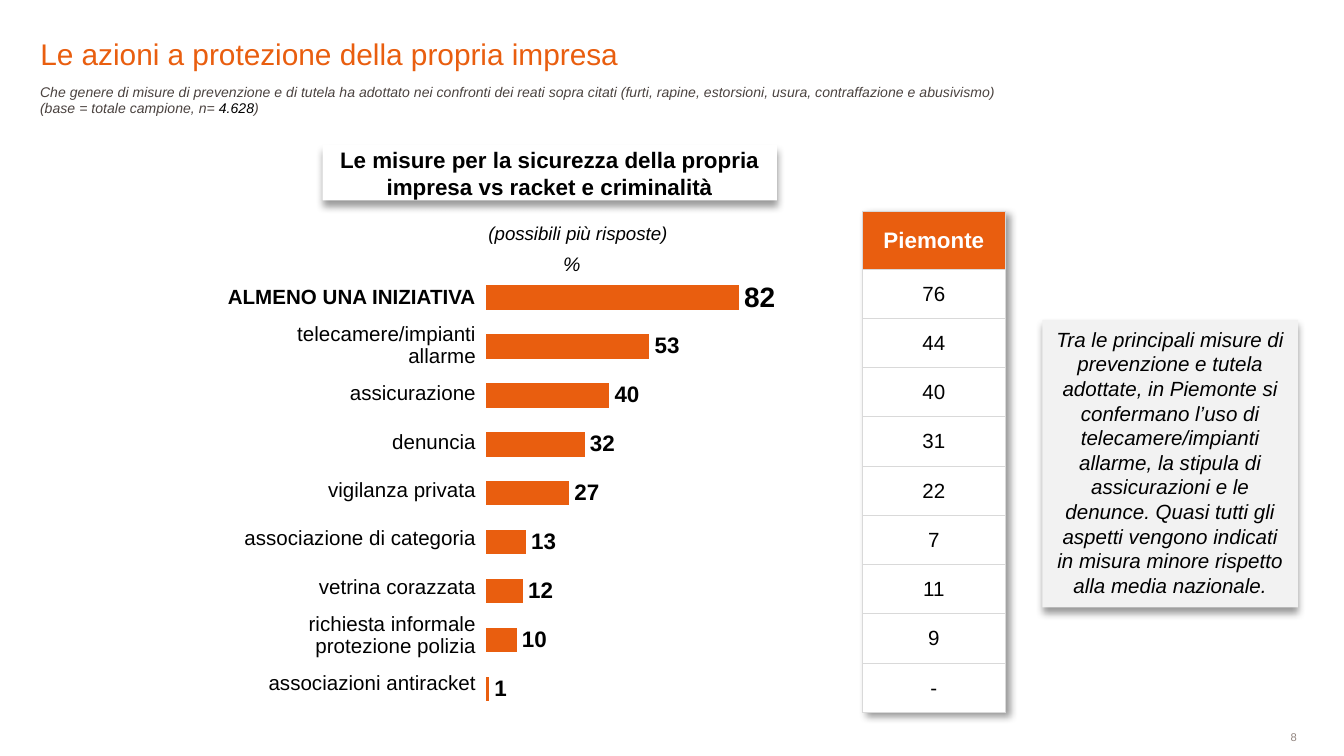
from lxml import etree
from pptx import Presentation
from pptx.chart.data import CategoryChartData
from pptx.dml.color import RGBColor
from pptx.enum.chart import XL_CHART_TYPE, XL_LABEL_POSITION
from pptx.enum.shapes import MSO_SHAPE
from pptx.enum.text import MSO_ANCHOR, PP_ALIGN
from pptx.oxml import parse_xml
from pptx.oxml.ns import nsdecls, qn
from pptx.util import Pt

ORANGE = RGBColor(0xE9, 0x5E, 0x0F)
BLACK = RGBColor(0, 0, 0)
WHITE = RGBColor(0xFF, 0xFF, 0xFF)
DARK = RGBColor(0x4A, 0x42, 0x3F)
GREY = RGBColor(0x92, 0x85, 0x80)
PALE = RGBColor(0xF2, 0xF2, 0xF2)
BORDER = RGBColor(0xD9, 0xD9, 0xD9)
FONT = "Arial"

# Label, national percentage, Piedmont percentage
MEASURES = [
    ("ALMENO UNA INIZIATIVA", 82, "76"),
    ("telecamere/impianti allarme", 53, "44"),
    ("assicurazione", 40, "40"),
    ("denuncia", 32, "31"),
    ("vigilanza privata", 27, "22"),
    ("associazione di categoria", 13, "7"),
    ("vetrina corazzata", 12, "11"),
    ("richiesta informale protezione polizia", 10, "9"),
    ("associazioni antiracket", 1, "-"),
]
COMMENT = (
    "Tra le principali misure di prevenzione e tutela adottate, in Piemonte si "
    "confermano l’uso di telecamere/impianti allarme, la stipula di assicurazioni "
    "e le denunce. Quasi tutti gli aspetti vengono indicati in misura minore "
    "rispetto alla media nazionale."
)


def points(box):
    return [Pt(length) for length in box]


def style_font(font, size, color=BLACK, bold=False, italic=False):
    values = {"name": FONT, "size": Pt(size), "bold": bold, "italic": italic}
    for name, value in values.items():
        setattr(font, name, value)
    font.color.rgb = color


def set_margins(target, left, top, right, bottom):
    margins = {"left": left, "top": top, "right": right, "bottom": bottom}
    for side, value in margins.items():
        setattr(target, f"margin_{side}", Pt(value))


def write(paragraph, runs, size, align=PP_ALIGN.LEFT, spacing=1.0, **style):
    """Write (text, colour) runs into one paragraph."""
    paragraph.alignment = align
    paragraph.line_spacing = spacing
    for text, color in runs:
        run = paragraph.add_run()
        run.text = text
        style_font(run.font, size, color, **style)


def add_text(slide, box, paragraphs, size, anchor=MSO_ANCHOR.TOP, inset=True, **style):
    frame = slide.shapes.add_textbox(*points(box)).text_frame
    frame.word_wrap = True
    frame.vertical_anchor = anchor
    if not inset:
        set_margins(frame, 0, 0, 0, 0)
    for index, runs in enumerate(paragraphs):
        paragraph = frame.add_paragraph() if index else frame.paragraphs[0]
        write(paragraph, runs, size, **style)


def shadow_xml(direction):
    return parse_xml(
        f'<a:effectLst {nsdecls("a")}><a:outerShdw blurRad="{Pt(4)}" dist="{Pt(3)}" '
        f'dir="{direction * 60000}" algn="t" rotWithShape="0"><a:srgbClr val="000000">'
        '<a:alpha val="40000"/></a:srgbClr></a:outerShdw></a:effectLst>'
    )


def add_panel(slide, box, fill, text, size, anchor, **style):
    """Filled box with a soft shadow and centred text."""
    shape = slide.shapes.add_shape(MSO_SHAPE.RECTANGLE, *points(box))
    shape.fill.solid()
    shape.fill.fore_color.rgb = fill
    shape.line.fill.background()
    shape._element.spPr.append(shadow_xml(90))
    frame = shape.text_frame
    frame.word_wrap = True
    frame.vertical_anchor = anchor
    write(frame.paragraphs[0], [(text, BLACK)], size, PP_ALIGN.CENTER, **style)


def border_cell(cell, color, width):
    properties = cell._tc.get_or_add_tcPr()
    for index, tag in enumerate(("a:lnL", "a:lnR", "a:lnT", "a:lnB")):
        line = etree.Element(qn(tag), w=str(Pt(width)))
        fill = etree.SubElement(line, qn("a:solidFill"))
        etree.SubElement(fill, qn("a:srgbClr"), val=str(color))
        properties.insert(index, line)


def add_column(slide, box, heights):
    """One-column table without a banded style."""
    table = slide.shapes.add_table(len(heights), 1, *points(box)).table
    table.first_row = table.horz_banding = False
    table._tbl.tblPr.find(qn("a:tableStyleId")).text = "{2D5ABB26-0587-4C30-8999-92F81FD0307C}"
    for row, height in zip(table.rows, heights):
        row.height = Pt(height)
        cell = row.cells[0]
        cell.vertical_anchor = MSO_ANCHOR.MIDDLE
        set_margins(cell, 0.7, 0.7, 0.7, 0)
    return table


def add_measure_labels(slide, box):
    table = add_column(slide, box, [box[3] / len(MEASURES)] * len(MEASURES))
    for index, (label, _, _) in enumerate(MEASURES):
        total = index == 0
        cell = table.cell(index, 0)
        cell.fill.background()
        cell.margin_left = Pt(0.7 if total else 12)
        write(cell.text_frame.paragraphs[0], [(label, BLACK)], 11, PP_ALIGN.RIGHT, 0.93,
              bold=total)


def add_piedmont_table(slide, box, header_height):
    row_height = (box[3] - header_height) / len(MEASURES)
    table = add_column(slide, box, [header_height] + [row_height] * len(MEASURES))
    table._tbl.tblPr.insert(0, shadow_xml(45))
    values = ["Piemonte"] + [value for _, _, value in MEASURES]
    for index, value in enumerate(values):
        header = index == 0
        cell = table.cell(index, 0)
        cell.fill.solid()
        cell.fill.fore_color.rgb = ORANGE if header else WHITE
        border_cell(cell, BORDER, 0.25)
        write(cell.text_frame.paragraphs[0], [(value, WHITE if header else BLACK)],
              12 if header else 11, PP_ALIGN.CENTER, bold=header)


def add_bar_chart(slide, box):
    data = CategoryChartData(number_format="0")
    data.categories = [str(number) for number in range(1, len(MEASURES) + 1)]
    data.add_series("Series 1", [value for _, value, _ in MEASURES])
    chart = slide.shapes.add_chart(XL_CHART_TYPE.BAR_CLUSTERED, *points(box), data).chart
    chart.has_legend = chart.has_title = False
    style_font(chart.font, 13.5)
    # Hidden axes
    chart.category_axis.reverse_order = True
    axis_values = {"minimum_scale": 0, "maximum_scale": 100, "major_unit": 10,
                   "has_major_gridlines": False}
    for name, value in axis_values.items():
        setattr(chart.value_axis, name, value)
    chart.category_axis.visible = chart.value_axis.visible = False
    # Bars and labels
    plot = chart.plots[0]
    plot.gap_width = 100
    plot.vary_by_categories = False
    series = plot.series[0]
    series.format.fill.solid()
    series.format.fill.fore_color.rgb = ORANGE
    labels = series.data_labels
    label_values = {"show_value": True, "number_format": "0",
                    "number_format_is_linked": False,
                    "position": XL_LABEL_POSITION.OUTSIDE_END}
    for name, value in label_values.items():
        setattr(labels, name, value)
    style_font(labels.font, 12, bold=True)
    first_label = series.points[0].data_label
    style_font(first_label.font, 15, bold=True)
    first_label.position = XL_LABEL_POSITION.OUTSIDE_END
    # Inner plot area, as fractions of the chart
    area = chart._chartSpace.chart.plotArea
    for old in area.findall(qn("c:layout")):
        area.remove(old)
    settings = {"layoutTarget": "inner", "xMode": "edge", "yMode": "edge",
                "x": 0.28, "y": 0, "w": 0.5, "h": 1}
    layout = etree.Element(qn("c:layout"))
    manual = etree.SubElement(layout, qn("c:manualLayout"))
    for name, value in settings.items():
        etree.SubElement(manual, qn(f"c:{name}"), val=str(value))
    area.insert(0, layout)


def build_slide(slide):
    # Heading and survey question
    add_text(slide, (21.6, 11.5, 590, 26.6), [[("Le azioni a protezione della propria impresa", ORANGE)]],
             16, MSO_ANCHOR.BOTTOM, inset=False)
    question = ("Che genere di misure di prevenzione e di tutela ha adottato nei confronti dei "
                "reati sopra citati (furti, rapine, estorsioni, usura, contraffazione e abusivismo)")
    base = [("(base = totale campione, n=", DARK), (" 4.628", BLACK), (")", DARK)]
    add_text(slide, (14.4, 41, 532, 25.2), [[(question, DARK)], base], 7.5, italic=True)
    # Chart region
    add_measure_labels(slide, (110.9, 146.2, 144.7, 233.3))
    add_panel(slide, (172.8, 77.8, 243.4, 29.5), WHITE,
              "Le misure per la sicurezza della propria impresa vs racket e criminalità",
              12, MSO_ANCHOR.MIDDLE, bold=True)
    add_bar_chart(slide, (167.8, 146.2, 330.5, 236.2))
    add_text(slide, (208.8, 115.2, 201.6, 19.4), [[("(possibili più risposte)", BLACK)]], 10,
             align=PP_ALIGN.CENTER, italic=True)
    add_text(slide, (295.9, 134.6, 20.9, 13), [[("%", BLACK)]], 10.5, MSO_ANCHOR.MIDDLE,
             inset=False, align=PP_ALIGN.CENTER, italic=True)
    # Regional comparison and comment
    add_piedmont_table(slide, (462, 113, 76.6, 268.6), 31)
    add_panel(slide, (558.5, 171.4, 136.8, 154.1), PALE, COMMENT, 11, MSO_ANCHOR.TOP, italic=True)
    # Page number
    add_text(slide, (598.3, 391.7, 96.5, 6.5), [[("8", GREY)]], 6, MSO_ANCHOR.MIDDLE,
             inset=False, align=PP_ALIGN.RIGHT)


def main():
    presentation = Presentation()
    presentation.slide_width, presentation.slide_height = Pt(720), Pt(405)
    build_slide(presentation.slides.add_slide(presentation.slide_layouts[6]))
    presentation.save("out.pptx")


if __name__ == "__main__":
    main()
